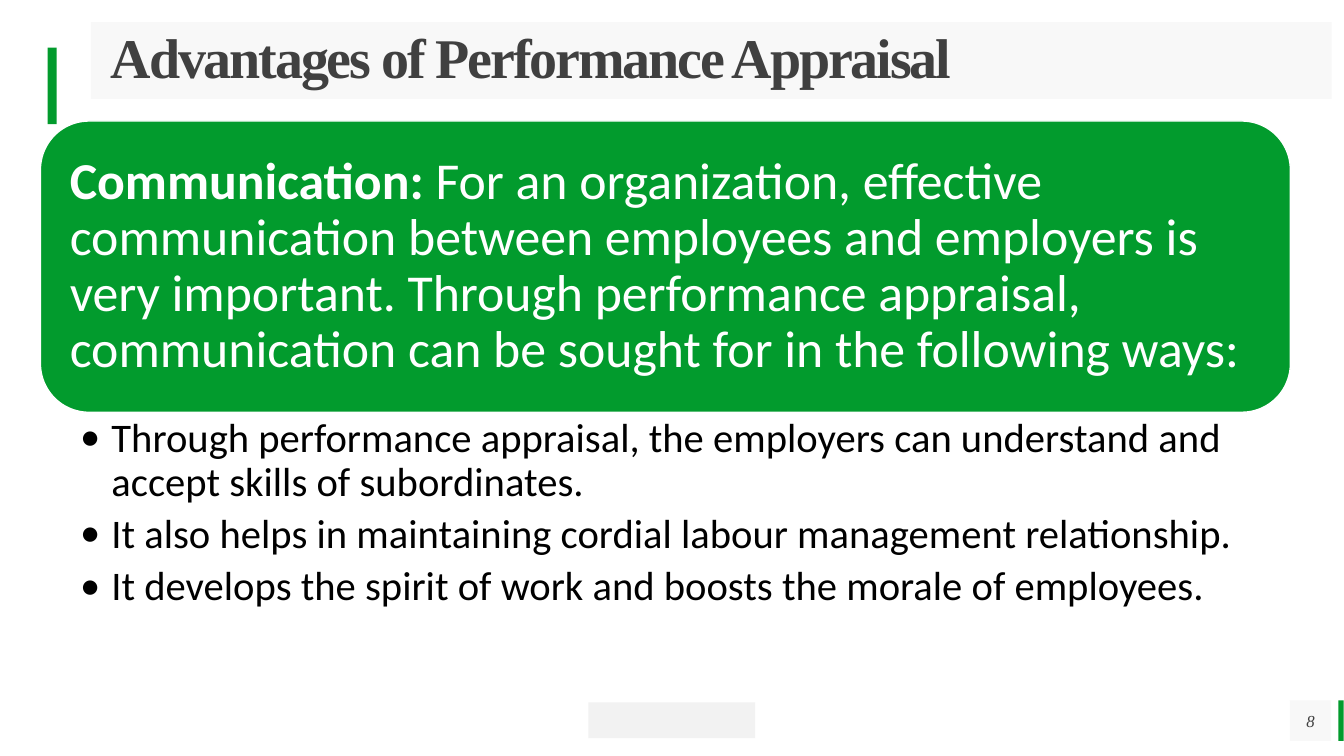
import pptx
import pptx.util
import pptx.dml.color
import pptx.enum.shapes
import pptx.enum.text
from lxml import etree

Cm, Pt = pptx.util.Cm, pptx.util.Pt
ALIGN = pptx.enum.text.PP_ALIGN
ANCHOR = pptx.enum.text.MSO_ANCHOR
SHAPE = pptx.enum.shapes.MSO_SHAPE
A = "{http://schemas.openxmlformats.org/drawingml/2006/main}"


def rgb(value):
    return pptx.dml.color.RGBColor.from_string(value)


class Deck:
    GREEN, GREY, PALE = "029B2D", "404040", "F2F2F2"
    WHITE, BLACK = "FFFFFF", "000000"
    SERIF, SANS = "Times New Roman", "Calibri"

    def __init__(self):
        self.prs = pptx.Presentation()
        self.prs.slide_width, self.prs.slide_height = Cm(33.87), Cm(19.05)
        self.s = self.prs.slides.add_slide(self.prs.slide_layouts[5])

    def fill(self, sp, color, alpha=None):
        sp.fill.solid()
        sp.fill.fore_color.rgb = rgb(color)
        if alpha:
            clr = sp.fill._xPr.find(f"{A}solidFill/{A}srgbClr")
            etree.SubElement(clr, f"{A}alpha", val=str(alpha * 1000))

    def shape(self, kind, box, color, alpha=None, line=None):
        sp = self.s.shapes.add_shape(kind, *map(Cm, box))
        sp.shadow.inherit = False
        self.fill(sp, color, alpha)
        if line:
            sp.line.color.rgb = rgb(line)
            sp.line.width = Pt(1)
        else:
            sp.line.fill.background()
        return sp

    def textbox(self, box, insets, anchor=ANCHOR.TOP):
        sp = self.s.shapes.add_textbox(*map(Cm, box))
        return self.frame(sp, insets, anchor)

    def title(self, box, insets):
        sp = self.s.shapes.title
        sp.left, sp.top, sp.width, sp.height = map(Cm, box)
        self.fill(sp, self.PALE, 50)
        return self.frame(sp, insets, ANCHOR.MIDDLE)

    def frame(self, sp, insets, anchor):
        tf = sp.text_frame
        tf.word_wrap = True
        tf.auto_size = pptx.enum.text.MSO_AUTO_SIZE.NONE
        tf.vertical_anchor = anchor
        tf.margin_left, tf.margin_top, tf.margin_right, tf.margin_bottom = map(Cm, insets)
        return tf

    def paragraph(self, tf, first=True, align=ALIGN.LEFT, spacing=0.9):
        p = tf.paragraphs[0] if first else tf.add_paragraph()
        p.alignment, p.line_spacing = align, spacing
        return p

    def bullet(self, p, indent):
        pPr = p._p.get_or_add_pPr()
        pPr.set("marL", str(Cm(indent)))
        pPr.set("indent", str(-Cm(indent)))
        etree.SubElement(pPr, f"{A}buFont", typeface=self.SANS)
        etree.SubElement(pPr, f"{A}buChar", char="•")

    def run(self, p, text, size, color, font=SANS, bold=False, italic=False, track=0):
        r = p.add_run()
        r.text = text
        f = r.font
        f.size, f.name, f.bold, f.italic = Pt(size), font, bold, italic
        f.color.rgb = rgb(color)
        if track:
            r._r.get_or_add_rPr().set("spc", str(int(track * 100)))


def main():
    d = Deck()

    # Green accents
    for box in [(33.73, 17.65, 0.13, 1.02), (1.2, 1.2, 0.23, 1.93)]:
        d.shape(SHAPE.RECTANGLE, box, d.GREEN)

    # Footer block
    d.shape(SHAPE.RECTANGLE, (14.83, 17.7, 4.2, 0.9), d.PALE)

    # Title
    p = d.paragraph(d.title((2.29, 0.56, 31.27, 1.93), (0.5, 0, 0, 0)))
    d.run(p, "Advantages of Performance Appraisal", 40, d.GREY, d.SERIF, bold=True, track=-1.5)

    # Page number
    sp = d.shape(SHAPE.RECTANGLE, (32.51, 17.65, 1.04, 1.02), d.PALE, 50)
    p = d.paragraph(d.frame(sp, (0, 0, 0, 0), ANCHOR.MIDDLE), align=ALIGN.CENTER, spacing=1.0)
    d.run(p, "8", 12, d.GREY, d.SERIF, italic=True)

    # Communication panel
    d.shape(SHAPE.ROUNDED_RECTANGLE, (1.02, 3.05, 31.5, 7.34), d.GREEN, line=d.WHITE)
    tf = d.textbox((1.38, 3.4, 30.78, 6.63), (0.38,) * 4, ANCHOR.MIDDLE)
    p = d.paragraph(tf)
    d.run(p, "Communication:", 37, d.WHITE, bold=True)
    d.run(p, " For an organization, effective communication between employees and "
          "employers is very important. Through performance appraisal, communication "
          "can be sought for in the following ways:", 37, d.WHITE)

    # Ways of communicating
    ways = [
        "Through performance appraisal, the employers can understand and accept skills of subordinates.",
        "It also helps in maintaining cordial labour management relationship.",
        "It develops the spirit of work and boosts the morale of employees.",
    ]
    tf = d.textbox((1.02, 10.39, 31.5, 8.08), (1, 0.13, 0.74, 0.13))
    for i, way in enumerate(ways):
        p = d.paragraph(tf, first=i == 0)
        p.space_after = Pt(6)
        d.bullet(p, 0.79)
        d.run(p, way, 29, d.BLACK)

    d.prs.save("out.pptx")


if __name__ == "__main__":
    main()
